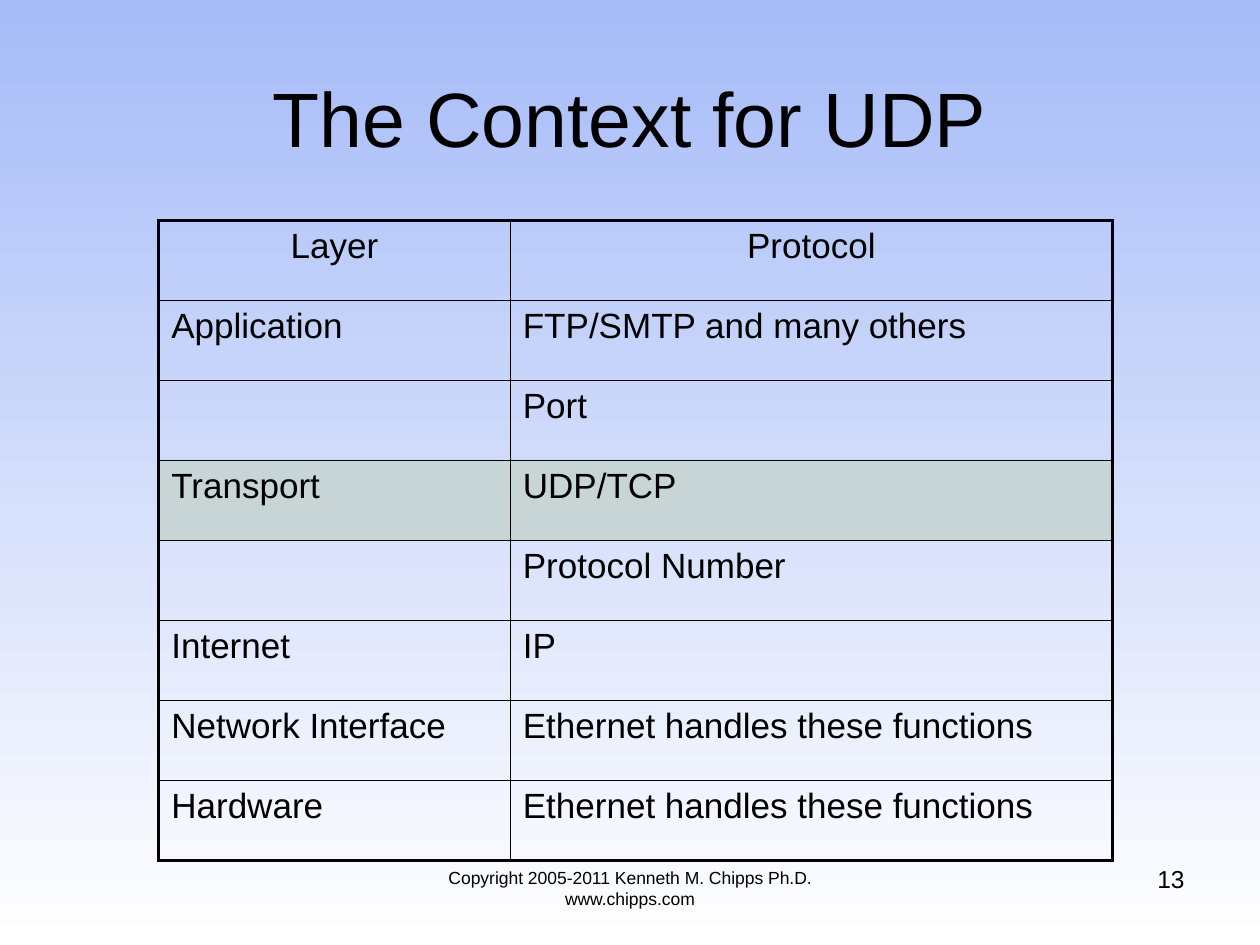
from lxml.etree import SubElement
from pptx import Presentation
from pptx.dml.color import RGBColor
from pptx.enum.text import MSO_ANCHOR as Anchor, PP_ALIGN as Align
from pptx.oxml.ns import qn
from pptx.util import Inches, Pt

BLACK = RGBColor(0x00, 0x00, 0x00)
SKY = RGBColor(0xA6, 0xBB, 0xF8)
WHITE = RGBColor(0xFF, 0xFF, 0xFF)
HIGHLIGHT = RGBColor(0xC7, 0xD5, 0xD7)

FRAME, RULE = Pt(2.25), Pt(1)

LAYERS = [
    ("Layer", "Protocol"),
    ("Application", "FTP/SMTP and many others"),
    ("", "Port"),
    ("Transport", "UDP/TCP"),
    ("", "Protocol Number"),
    ("Internet", "IP"),
    ("Network Interface", "Ethernet handles these functions"),
    ("Hardware", "Ethernet handles these functions"),
]


class SlideBuilder:
    font = "Arial"
    color = BLACK

    def __init__(self, slide):
        self.slide = slide

    def background(self, top, bottom):
        fill = self.slide.background.fill
        fill.gradient()
        fill.gradient_angle = 270
        for stop, color in zip(fill.gradient_stops, (top, bottom)):
            stop.color.rgb = color

    def style(self, paragraph, size, align):
        paragraph.alignment = align
        paragraph.font.name = self.font
        paragraph.font.size = Pt(size)
        paragraph.font.color.rgb = self.color

    def text(self, words, left, top, width, height, size, align, anchor=Anchor.TOP):
        box = self.slide.shapes.add_textbox(
            Inches(left), Inches(top), Inches(width), Inches(height))
        frame = box.text_frame
        frame.word_wrap = True
        frame.vertical_anchor = anchor
        frame.text = words
        self.style(frame.paragraphs[0], size, align)

    def border(self, cell, side, width):
        line = SubElement(cell._tc.get_or_add_tcPr(), qn(f"a:ln{side}"), w=str(width))
        fill = SubElement(line, qn("a:solidFill"))
        SubElement(fill, qn("a:srgbClr"), val=str(self.color))

    def table(self, rows, left, top, widths, row_height, size, highlighted):
        last_row, last_column = len(rows) - 1, len(widths) - 1
        grid = self.slide.shapes.add_table(
            len(rows), len(widths), Inches(left), Inches(top),
            Inches(sum(widths)), Inches(row_height * len(rows))).table
        grid.first_row = grid.horz_banding = False
        for column, width in zip(grid.columns, widths):
            column.width = Inches(width)
        for r, row in enumerate(rows):
            grid.rows[r].height = Inches(row_height)
            for c, words in enumerate(row):
                cell = grid.cell(r, c)
                cell.text = words
                self.style(cell.text_frame.paragraphs[0], size,
                           Align.CENTER if r == 0 else Align.LEFT)
                # Heavy frame outside, thin rules inside
                outer = {"L": c == 0, "R": c == last_column,
                         "T": r == 0, "B": r == last_row}
                for side, is_outer in outer.items():
                    self.border(cell, side, FRAME if is_outer else RULE)
                if row[0] == highlighted:
                    cell.fill.solid()
                    cell.fill.fore_color.rgb = HIGHLIGHT
                else:
                    cell.fill.background()


def main():
    deck = Presentation()
    deck.slide_width, deck.slide_height = Inches(10), Inches(7.5)
    builder = SlideBuilder(deck.slides.add_slide(deck.slide_layouts[6]))

    # Background and title
    builder.background(SKY, WHITE)
    builder.text("The Context for UDP", 0.5, 0.3, 9, 1.25, 44,
                 Align.CENTER, Anchor.MIDDLE)

    # Protocol stack
    builder.table(LAYERS, 1.26, 1.75, (2.79, 4.78), 0.635, 20, "Transport")

    # Footer and page number
    builder.text("Copyright 2005-2011 Kenneth M. Chipps Ph.D. www.chipps.com",
                 3, 6.83, 4, 0.52, 10, Align.CENTER)
    builder.text("13", 7.17, 6.81, 2.33, 0.52, 14, Align.RIGHT)

    deck.save("out.pptx")


if __name__ == "__main__":
    main()
